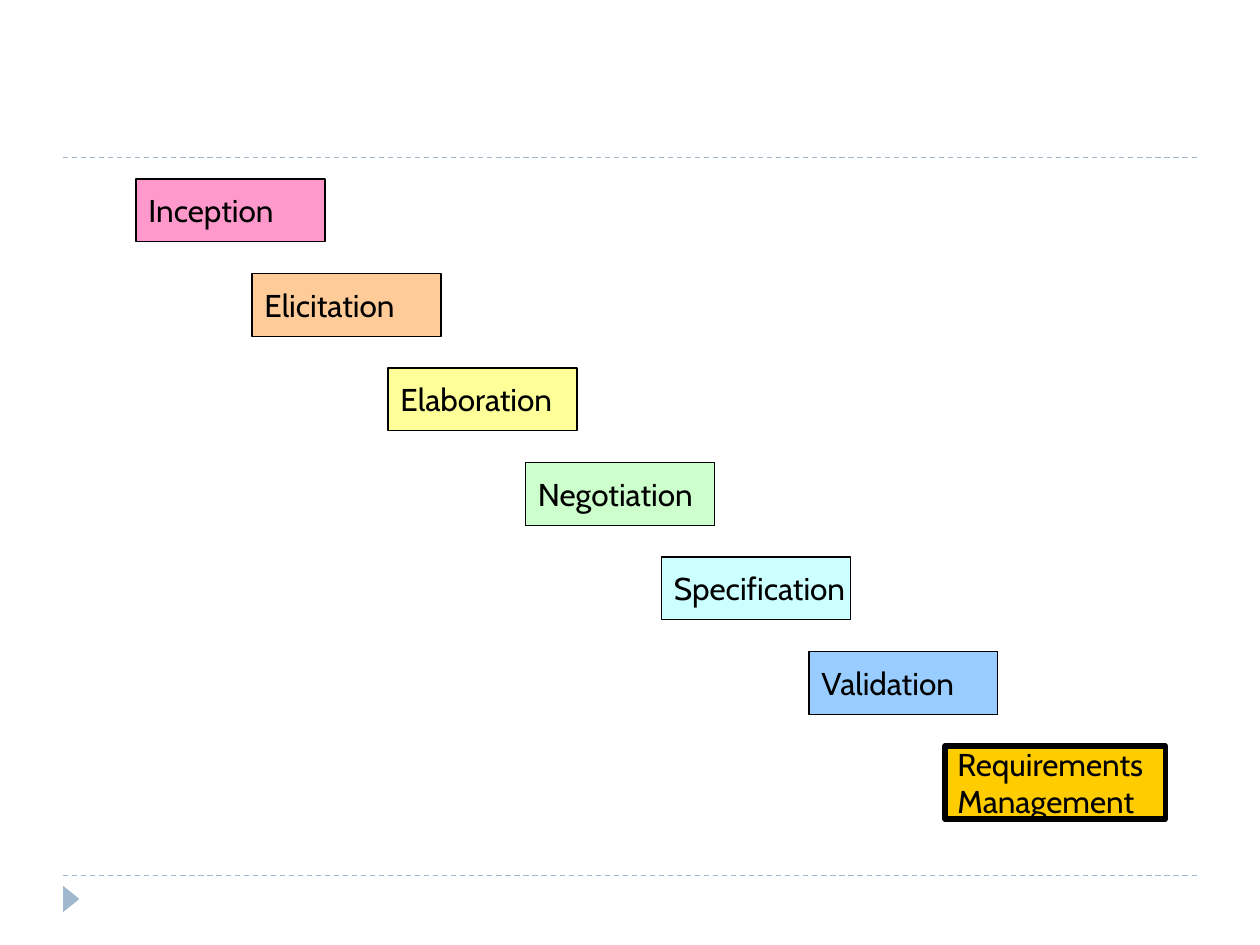
from dataclasses import dataclass
from lxml.etree import SubElement
from pptx import Presentation
from pptx.dml.color import RGBColor
from pptx.enum.dml import MSO_LINE
from pptx.enum.shapes import MSO_CONNECTOR, MSO_SHAPE
from pptx.enum.text import MSO_ANCHOR, PP_ALIGN
from pptx.oxml.ns import qn
from pptx.util import Inches, Pt


@dataclass(frozen=True)
class Theme:
    """Colours, font and sizes of the slide."""
    ink: str = "000000"
    trim: str = "9FB8CD"
    font: str = "Cabin"
    size: float = 18
    thin: float = 0.75
    thick: float = 3


THEME = Theme()
STEPS = [
    ("Inception", 1.08, "FF99CC"),
    ("Elicitation", 2, "FFCC99"),
    ("Elaboration", 3.08, "FFFF99"),
    ("Negotiation", 4.17, "CCFFCC"),
    ("Specification", 5.25, "CCFFFF"),
    ("Validation", 6.42, "99CCFF"),
]


def style(item, values):
    """Set each named attribute of an item."""
    for name, value in values.items():
        setattr(item, name, value)


def shape(slide, kind, box, fill):
    """Add a flat filled shape in a box given in inches."""
    part = slide.shapes.add_shape(kind, *map(Inches, box))
    part.shadow.inherit = False
    part.fill.solid()
    part.fill.fore_color.rgb = RGBColor.from_string(fill)
    return part


def label(slide, box, text, fill, width):
    """Add a bordered rectangle with left-aligned text."""
    part = shape(slide, MSO_SHAPE.RECTANGLE, box, fill)
    part.line.color.rgb = RGBColor.from_string(THEME.ink)
    part.line.width = Pt(width)
    frame = part.text_frame
    frame.text = text
    style(frame, {"word_wrap": False, "vertical_anchor": MSO_ANCHOR.MIDDLE})
    for para in frame.paragraphs:
        para.alignment = PP_ALIGN.LEFT
        for run in para.runs:
            style(run.font, {"name": THEME.font, "size": Pt(THEME.size)})
            run.font.color.rgb = RGBColor.from_string(THEME.ink)


def rule(slide, left, top, width):
    """Add a dashed horizontal line."""
    line = slide.shapes.add_connector(
        MSO_CONNECTOR.STRAIGHT, Inches(left), Inches(top),
        Inches(left + width), Inches(top))
    line.line.color.rgb = RGBColor.from_string(THEME.trim)
    style(line.line, {"width": Pt(THEME.thin), "dash_style": MSO_LINE.DASH})
    SubElement(line._element.spPr, qn("a:effectLst"))


def trim(slide, box):
    """Frame the body box with two rules and a corner marker."""
    left, top, width, height = box
    base = top + height
    for y in (base, top):
        rule(slide, left, y, width)
    mark = shape(slide, MSO_SHAPE.ISOSCELES_TRIANGLE,
                 (left - 0.04, base + 0.12, 0.21, 0.13), THEME.trim)
    mark.rotation = 90
    mark.line.fill.background()


def stairs(slide, box):
    """Place the steps downward, ending in the emphasised one."""
    left, top, width, height = box
    pitch = 0.75
    for row, (text, shift, fill) in enumerate(STEPS):
        label(slide, (left + shift, top + row * pitch, 1.5, 0.5),
              text, fill, THEME.thin)
    label(slide, (left + width - 1.75, top + height - 0.58, 1.75, 0.58),
          "Requirements\nManagement", "FFCC00", THEME.thick)


def main():
    """Build and save the slide."""
    deck = Presentation()
    style(deck, {"slide_width": Inches(10), "slide_height": Inches(7.5)})
    slide = deck.slides.add_slide(deck.slide_layouts[6])
    trim(slide, (0.5, 1.25, 9, 5.7))
    stairs(slide, (0, 1.42, 9.25, 5.08))
    deck.save("out.pptx")


if __name__ == "__main__":
    main()
